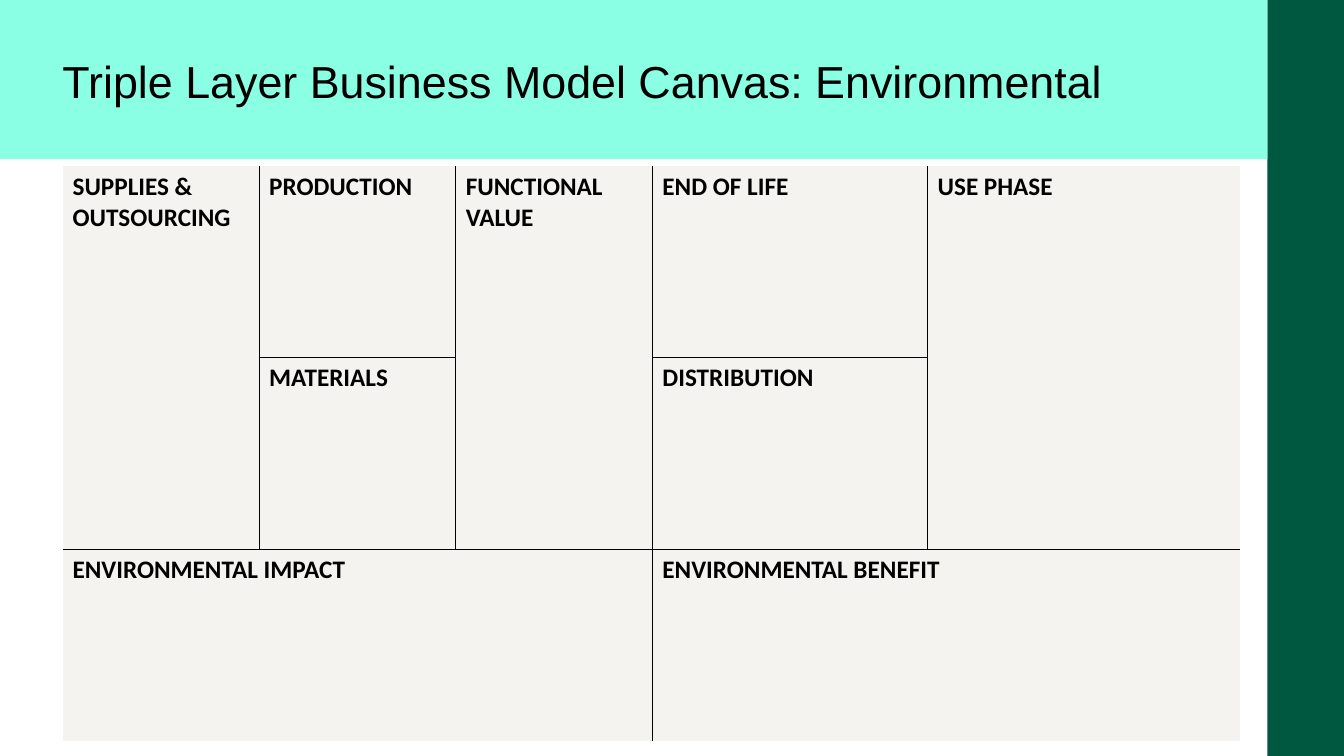
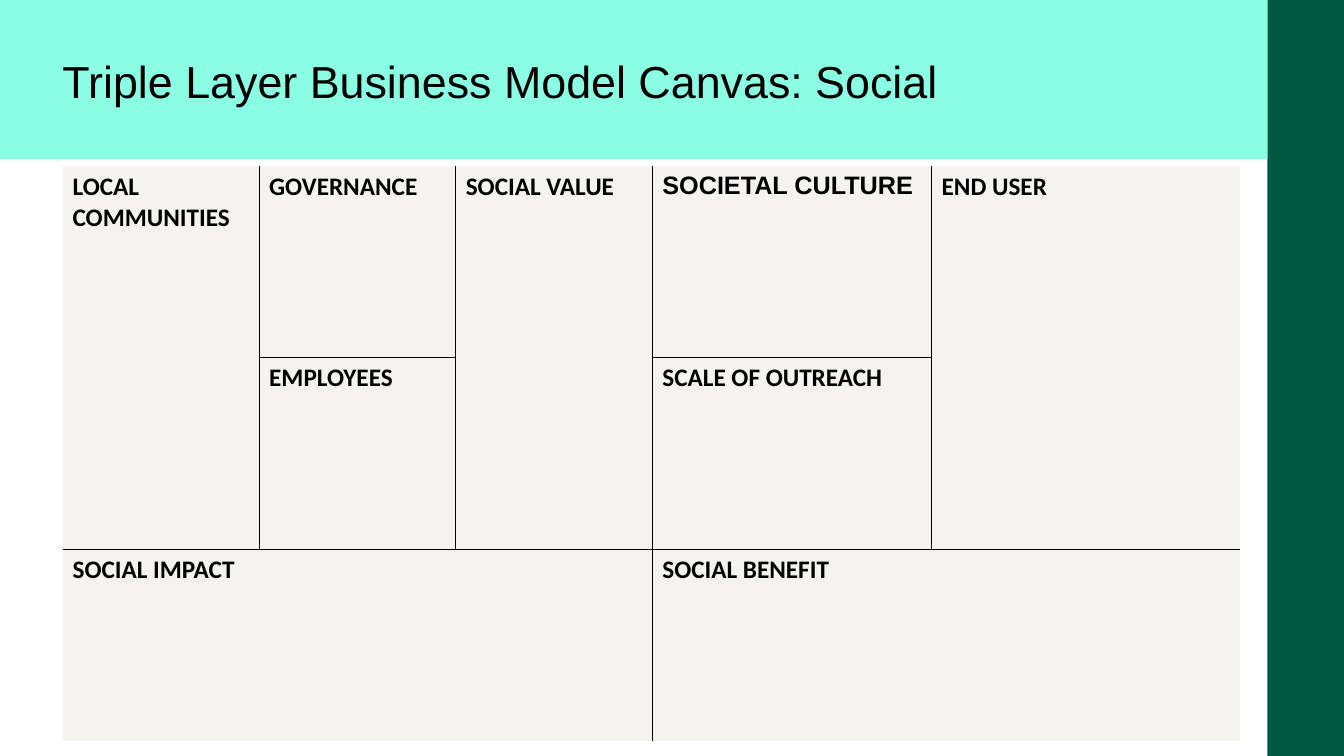
"""Builds two layers of a business model canvas as table slides."""
from lxml import etree
from pptx import Presentation
from pptx.dml.color import RGBColor
from pptx.enum.shapes import MSO_SHAPE
from pptx.oxml.ns import qn
from pptx.util import Emu, Pt

RECTANGLE = MSO_SHAPE.RECTANGLE
PX = 9144
PAGE_WIDTH, PAGE_HEIGHT = 1333, 750
BAND_WIDTH, BAND_HEIGHT = 1257, 158
LEFT = 62
TABLE_TOP, TABLE_WIDTH = 165, 1168
NARROW, ROW_HEIGHT = 195, 190
ROWS, COLUMNS = 3, 5
COLORS = {"side": "005840", "band": "8BFFE3", "cell": "F5F3EF", "ink": "000000"}
TITLE_FONT, LABEL_FONT = "Arial", "Calibri"

# Each region is row, column, row span, column span.
REGIONS = [
    (0, 0, 2, 1), (0, 1, 1, 1), (1, 1, 1, 1), (0, 2, 2, 1),
    (0, 3, 1, 1), (1, 3, 1, 1), (0, 4, 2, 1),
    (2, 0, 1, 3), (2, 3, 1, 2),
]
CANVASES = [
    ("Environmental", 273, [
        ("SUPPLIES & OUTSOURCING", LABEL_FONT), ("PRODUCTION", LABEL_FONT),
        ("MATERIALS", LABEL_FONT), ("FUNCTIONAL VALUE", LABEL_FONT),
        ("END OF LIFE", LABEL_FONT), ("DISTRIBUTION", LABEL_FONT),
        ("USE PHASE", LABEL_FONT), ("ENVIRONMENTAL IMPACT", LABEL_FONT),
        ("ENVIRONMENTAL BENEFIT", LABEL_FONT),
    ]),
    ("Social", 277, [
        ("LOCAL COMMUNITIES", LABEL_FONT), ("GOVERNANCE", LABEL_FONT),
        ("EMPLOYEES", LABEL_FONT), ("SOCIAL VALUE", LABEL_FONT),
        ("SOCIETAL CULTURE", TITLE_FONT), ("SCALE OF OUTREACH", LABEL_FONT),
        ("END USER", LABEL_FONT), ("SOCIAL IMPACT", LABEL_FONT),
        ("SOCIAL BENEFIT", LABEL_FONT),
    ]),
]


def px(length):
    return Emu(length * PX)


def color(name):
    return RGBColor.from_string(COLORS[name])


def add_span(para, text, font, size, bold=False):
    span = para.add_run()
    span.text = text
    span.font.name = font
    span.font.size = Pt(size)
    span.font.bold = bold
    span.font.color.rgb = color("ink")


def add_band(page, left, top, width, height, fill):
    band = page.shapes.add_shape(RECTANGLE, px(left), px(top), px(width), px(height))
    band.shadow.inherit = False
    band.fill.solid()
    band.fill.fore_color.rgb = color(fill)
    band.line.fill.background()


def add_title(page, text):
    box = page.shapes.add_textbox(px(LEFT), px(53), px(1133), px(52))
    frame = box.text_frame
    frame.word_wrap = True
    frame.margin_left = frame.margin_right = 0
    frame.margin_top = frame.margin_bottom = 0
    add_span(frame.paragraphs[0], text, TITLE_FONT, 32)


def set_borders(cell, edges):
    properties = cell._tc.get_or_add_tcPr()
    for tag, visible in edges.items():
        line = etree.SubElement(properties, qn(f"a:{tag}"), w=str(Pt(1)))
        if visible:
            fill = etree.SubElement(line, qn("a:solidFill"))
            etree.SubElement(fill, qn("a:srgbClr"), val=COLORS["ink"])
        else:
            etree.SubElement(line, qn("a:noFill"))


def style_region(table, region):
    top, left, row_span, column_span = region
    bottom, right = top + row_span, left + column_span
    for row in range(top, bottom):
        for column in range(left, right):
            cell = table.cell(row, column)
            set_borders(cell, {
                "lnL": column == left > 0,
                "lnR": column + 1 == right < COLUMNS,
                "lnT": row == top > 0,
                "lnB": row + 1 == bottom < ROWS,
            })
            cell.fill.solid()
            cell.fill.fore_color.rgb = color("cell")


def add_canvas(page, middle_width, labels):
    frame = page.shapes.add_table(ROWS, COLUMNS, px(LEFT), px(TABLE_TOP),
                                  px(TABLE_WIDTH), px(ROWS * ROW_HEIGHT))
    table = frame.table
    table.first_row = table.horz_banding = False
    last_width = TABLE_WIDTH - 3 * NARROW - middle_width
    for column, width in zip(table.columns, [NARROW] * 3 + [middle_width, last_width]):
        column.width = px(width)
    for row in table.rows:
        row.height = px(ROW_HEIGHT)
    for region, (text, font) in zip(REGIONS, labels):
        top, left, row_span, column_span = region
        style_region(table, region)
        cell = table.cell(top, left)
        if row_span * column_span > 1:
            cell.merge(table.cell(top + row_span - 1, left + column_span - 1))
        add_span(cell.text_frame.paragraphs[0], text, font, 18, bold=True)


def add_page(deck, layer, middle_width, labels):
    page = deck.slides.add_slide(deck.slide_layouts[6])
    add_band(page, BAND_WIDTH, 0, PAGE_WIDTH - BAND_WIDTH, PAGE_HEIGHT, "side")
    add_band(page, 0, 0, BAND_WIDTH, BAND_HEIGHT, "band")
    add_title(page, f"Triple Layer Business Model Canvas: {layer}")
    add_canvas(page, middle_width, labels)


def main():
    deck = Presentation()
    deck.slide_width, deck.slide_height = px(PAGE_WIDTH), px(PAGE_HEIGHT)
    for layer, middle_width, labels in CANVASES:
        add_page(deck, layer, middle_width, labels)
    deck.save("out.pptx")


if __name__ == "__main__":
    main()
